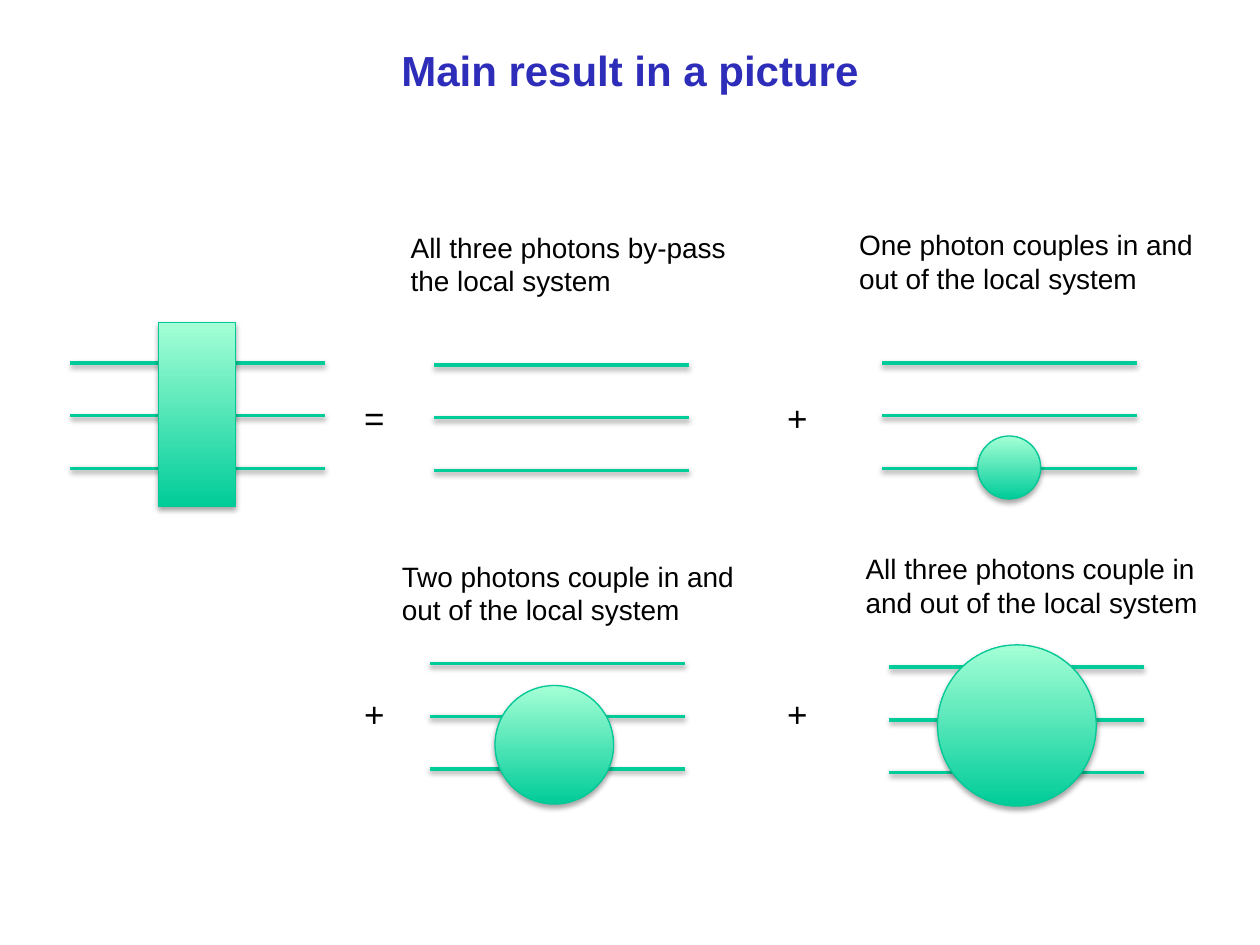
from dataclasses import dataclass

from lxml import etree
from pptx import Presentation
from pptx.dml.color import RGBColor
from pptx.enum.shapes import MSO_CONNECTOR, MSO_SHAPE
from pptx.enum.text import MSO_ANCHOR, MSO_AUTO_SIZE, PP_ALIGN
from pptx.oxml.ns import qn
from pptx.util import Cm, Pt

STRAIGHT = MSO_CONNECTOR.STRAIGHT
RECTANGLE, OVAL = MSO_SHAPE.RECTANGLE, MSO_SHAPE.OVAL
TOP = MSO_ANCHOR.TOP
CENTER, LEFT = PP_ALIGN.CENTER, PP_ALIGN.LEFT
FIT_SHAPE = MSO_AUTO_SIZE.SHAPE_TO_FIT_TEXT
TITLE_ONLY = 5


@dataclass(frozen=True)
class Theme:
    font: str = "Arial"
    title: RGBColor = RGBColor(0x2D, 0x2D, 0xB9)
    text: RGBColor = RGBColor(0, 0, 0)
    photon: RGBColor = RGBColor(0x00, 0xCC, 0x99)
    highlight: RGBColor = RGBColor(0xA5, 0xFF, 0xD6)
    outline: RGBColor = RGBColor(0x00, 0xC8, 0x96)
    title_size: Pt = Pt(24)
    operator_size: Pt = Pt(20)
    caption_size: Pt = Pt(16)


THEME = Theme()

# Lengths in centimetres
PHOTON_COUNT, PHOTON_LENGTH, PHOTON_GAP = 3, 5.14, 1.06

# Origin of the photon lines, then the coupling shape and its box
DIAGRAMS = [
    ((1.42, 7.32), RECTANGLE, (3.2, 6.5, 1.55, 3.71)),
    ((8.75, 7.36), None, None),
    ((17.78, 7.32), OVAL, (19.71, 8.79, 1.27, 1.27)),
    ((8.67, 13.38), OVAL, (9.98, 13.82, 2.39, 2.39)),
    ((17.93, 13.45), OVAL, (18.9, 13, 3.2, 3.25)),
]

OPERATOR_COLUMNS = (7.09, 15.62)
OPERATOR_ROWS = ((7.87, "=+"), (13.84, "++"))

CAPTIONS = [
    ("All three photons by-pass the local system", 8.03, 4.52, 7.04),
    ("One photon couples in and out of the local system", 17.07, 4.47, 7.49),
    ("Two photons couple in and out of the local system", 7.85, 11.15, 7.49),
    ("All three photons couple in and out of the local system", 17.2, 11, 7.49),
]


def set_attributes(target, values):
    for name, value in values.items():
        setattr(target, name, value)


def write_text(shape, text, size, color, bold=False, alignment=LEFT):
    paragraph = shape.text_frame.paragraphs[0]
    paragraph.alignment = alignment
    run = paragraph.add_run()
    run.text = text
    set_attributes(run.font, {"name": THEME.font, "size": size, "bold": bold})
    run.font.color.rgb = color


def add_shadow(shape, distance, opacity):
    """Cast a soft black shadow straight down."""
    effects = etree.SubElement(shape._element.spPr, qn("a:effectLst"))
    shadow = etree.SubElement(
        effects, qn("a:outerShdw"), blurRad=str(Pt(3.1)),
        dist=str(Pt(distance)), dir="5400000", rotWithShape="0")
    black = etree.SubElement(shadow, qn("a:srgbClr"), val="000000")
    etree.SubElement(black, qn("a:alpha"), val=str(opacity * 1000))


def add_title(slide, text):
    title = slide.shapes.title
    set_attributes(title, {"left": Cm(1.27), "top": Cm(0.76),
                           "width": Cm(22.86), "height": Cm(3.18)})
    title.text_frame.vertical_anchor = TOP
    write_text(title, text, THEME.title_size, THEME.title, True, CENTER)


def add_label(slide, text, left, top, width, height, size, wrap):
    box = slide.shapes.add_textbox(Cm(left), Cm(top), Cm(width), Cm(height))
    set_attributes(box.text_frame, {"word_wrap": wrap, "auto_size": FIT_SHAPE})
    write_text(box, text, size, THEME.text)


def add_photon(group, left, top):
    photon = group.shapes.add_connector(
        STRAIGHT, Cm(left), Cm(top), Cm(left + PHOTON_LENGTH), Cm(top))
    photon.line.color.rgb = THEME.photon
    photon.line.width = Pt(2)
    add_shadow(photon, 1.6, 38)


def add_coupling(group, kind, box):
    shape = group.shapes.add_shape(kind, *map(Cm, box))
    shape.fill.gradient()
    shape.fill.gradient_angle = 90
    colors = (THEME.photon, THEME.highlight)
    for stop, color in zip(shape.fill.gradient_stops, colors):
        stop.color.rgb = color
    shape.line.color.rgb = THEME.outline
    shape.line.width = Pt(0.75)
    add_shadow(shape, 1.8, 35)


def add_diagram(slide, origin, kind, box):
    group = slide.shapes.add_group_shape()
    left, top = origin
    for index in range(PHOTON_COUNT):
        add_photon(group, left, top + index * PHOTON_GAP)
    if kind is not None:
        add_coupling(group, kind, box)


def main():
    presentation = Presentation()
    set_attributes(presentation, {"slide_width": Cm(25.4),
                                  "slide_height": Cm(19.05)})
    slide = presentation.slides.add_slide(presentation.slide_layouts[TITLE_ONLY])
    add_title(slide, "Main result in a picture")

    # Photon lines with the local system
    for origin, kind, box in DIAGRAMS:
        add_diagram(slide, origin, kind, box)

    # Signs between the diagrams
    for top, signs in OPERATOR_ROWS:
        for left, sign in zip(OPERATOR_COLUMNS, signs):
            add_label(slide, sign, left, top, 0.94, 1.12,
                      THEME.operator_size, False)

    # Explanations above the diagrams
    for text, left, top, width in CAPTIONS:
        add_label(slide, text, left, top, width, 1.63,
                  THEME.caption_size, True)

    presentation.save("out.pptx")


if __name__ == "__main__":
    main()
